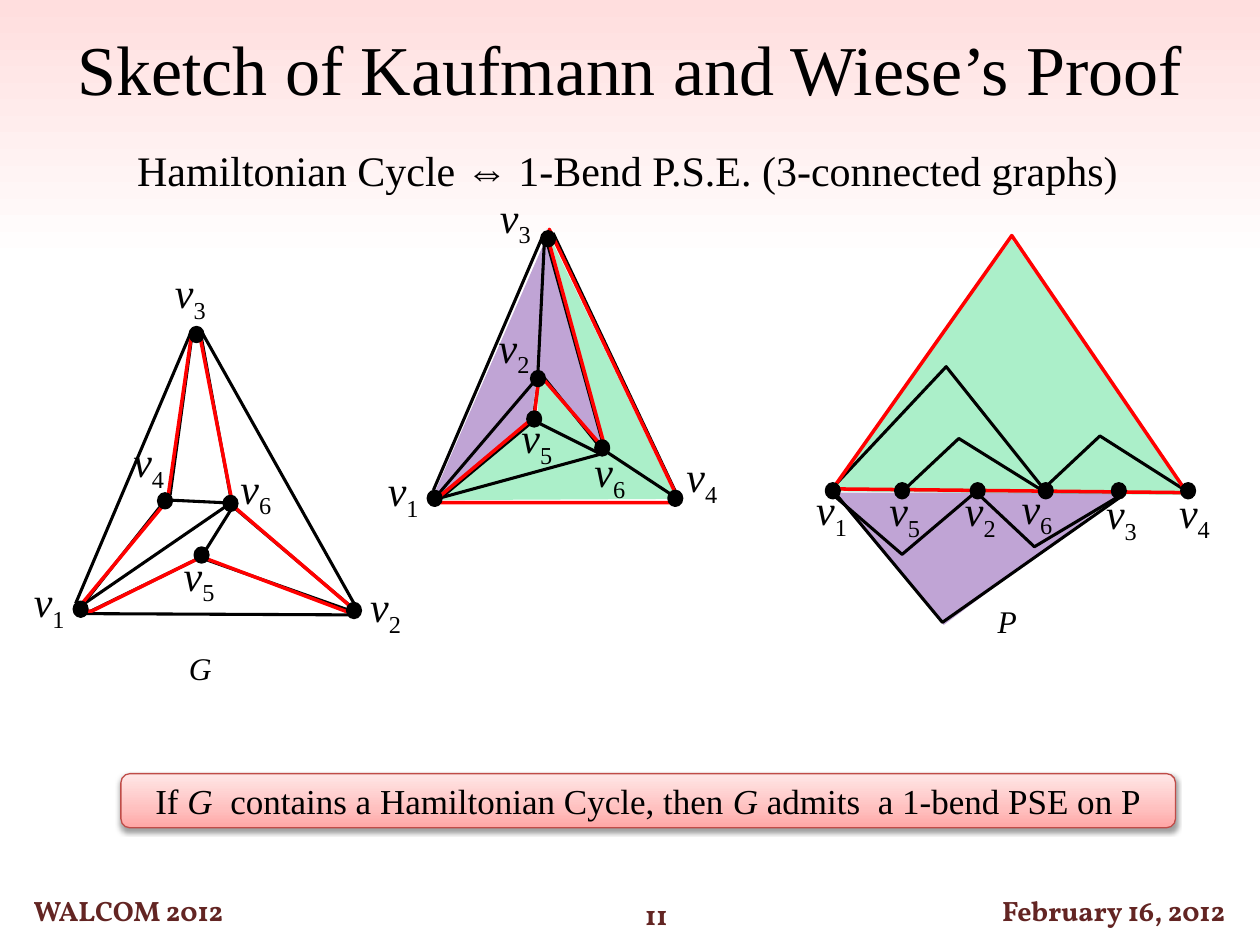
from lxml import etree
from pptx import Presentation
from pptx.dml.color import RGBColor
from pptx.enum.shapes import MSO_CONNECTOR, MSO_SHAPE
from pptx.enum.text import MSO_ANCHOR, MSO_AUTO_SIZE, PP_ALIGN
from pptx.oxml.ns import qn
from pptx.util import Inches, Pt

LINE = MSO_CONNECTOR.STRAIGHT
OVAL, RECT, ROUND = MSO_SHAPE.OVAL, MSO_SHAPE.RECTANGLE, MSO_SHAPE.ROUNDED_RECTANGLE
LEFT, MID = PP_ALIGN.LEFT, PP_ALIGN.CENTER
CENTER = MSO_ANCHOR.MIDDLE
GROW = MSO_AUTO_SIZE.SHAPE_TO_FIT_TEXT

BLACK = RGBColor(0, 0, 0)
WHITE = RGBColor(255, 255, 255)
RED = RGBColor(255, 0, 0)
PURPLE = RGBColor(0x70, 0x30, 0xA0)
GREEN = RGBColor(0x00, 0xD0, 0x5E)
BROWN = RGBColor(0x63, 0x25, 0x23)
PINK = RGBColor(0xFF, 0xDE, 0xDE)
ROSE = RGBColor(0xBF, 0x4C, 0x48)
GLOW = [(0, RGBColor(0xFF, 0xA6, 0xA5)), (35, RGBColor(0xFF, 0xC0, 0xBF)),
        (100, RGBColor(0xFF, 0xE7, 0xE7))]
FADE = [(0, WHITE), (70, WHITE), (100, PINK)]

SERIF, FOOT = "Times New Roman", "Vollkorn"

# Each graph: vertex -> (dot left, dot top, label left, label top)
GRAPH = {1: (0.59, 4.78, 0.17, 4.52), 2: (2.76, 4.79, 2.84, 4.56),
         3: (1.51, 2.6, 1.29, 2.07), 4: (1.26, 3.92, 0.96, 3.41),
         5: (1.55, 4.35, 1.36, 4.31), 6: (1.78, 3.94, 1.81, 3.62)}
GRAPH_EDGES = [
    (1.51, 2.65, 0.6, 4.79), (1.61, 2.65, 2.81, 4.79), (1.56, 4.44, 0.64, 4.89),
    (2.76, 4.84, 1.63, 4.44), (2.77, 4.8, 1.86, 4.03), (0.6, 4.87, 1.28, 4.01),
    (1.52, 2.69, 1.35, 3.93), (1.6, 2.69, 1.83, 3.94), (1.63, 4.37, 1.83, 4.05),
    (1.82, 4, 0.67, 4.79), (2.77, 4.88, 0.6, 4.87), (1.78, 3.99, 1.36, 3.97)]
GRAPH_CYCLE = [
    (1.33, 3.97), (0.61, 4.84), (0.67, 4.85), (0.73, 4.85), (1.6, 4.42),
    (2.82, 4.88), (2.82, 4.81), (2.79, 4.82), (1.82, 3.99), (1.84, 3.97),
    (1.58, 2.63), (1.52, 2.66)]

SPLIT = {1: (3.4, 3.9, 2.98, 3.64), 2: (4.22, 2.95, 3.86, 2.5),
         3: (4.3, 1.84, 3.87, 1.47), 4: (5.31, 3.9, 5.35, 3.53),
         5: (4.19, 3.27, 4.04, 3.22), 6: (4.73, 3.5, 4.62, 3.49)}
SPLIT_EDGES = [
    (4.3, 1.89, 3.44, 3.89), (4.39, 1.85, 5.36, 3.9), (3.48, 3.99, 5.34, 3.99),
    (4.32, 1.93, 4.27, 2.95), (3.48, 3.92, 4.23, 3.04), (4.24, 3.27, 4.27, 3.06),
    (4.74, 3.52, 4.32, 3), (4.21, 3.36, 3.5, 3.95), (4.78, 3.5, 4.35, 1.95),
    (4.82, 3.59, 3.5, 3.95), (4.28, 3.36, 4.78, 3.61), (5.32, 3.92, 4.82, 3.59)]
SPLIT_CYCLE = [
    (3.43, 3.99), (5.39, 3.99), (5.36, 3.91), (4.36, 1.82), (4.36, 1.93),
    (4.81, 3.58), (4.28, 2.97), (4.24, 3.31)]
SPLIT_OUT = [(3.45, 3.91), (3.51, 3.93), (4.22, 3.31), (4.27, 2.94),
             (4.81, 3.58), (4.53, 2.56), (4.34, 1.81), (4.34, 1.88)]
SPLIT_IN = [(3.42, 3.97), (4.27, 3.31), (4.27, 2.98), (4.81, 3.57),
            (4.36, 1.87), (5.37, 3.96)]

ROW = 3.84
POINTS = {1: (6.56, ROW, 6.38, 3.79), 5: (7.11, ROW, 6.96, 3.8),
          2: (7.71, ROW, 7.56, 3.8), 6: (8.25, ROW, 8.01, 3.78),
          3: (8.83, ROW, 8.68, 3.82), 4: (9.38, ROW, 9.26, 3.81)}
BENDS = [
    [(6.58, 3.9), (7.16, 4.4), (7.75, 3.9)],
    [(6.6, 3.88), (7.48, 4.94), (8.9, 3.94)],
    [(7.72, 3.88), (8.21, 4.34), (8.88, 3.94)],
    [(6.6, 3.88), (7.51, 2.91), (8.3, 3.9)],
    [(7.13, 3.93), (7.61, 3.48), (8.3, 3.91)],
    [(8.25, 3.91), (8.73, 3.46), (9.42, 3.9)]]
TOUR = [(6.57, 3.88), (9.42, 3.91), (8.03, 1.87), (6.63, 3.85)]
BELOW = [(6.61, 3.91), (7.49, 4.96), (8.9, 3.91)]
ABOVE = [(6.58, 3.9), (8.03, 1.9), (9.45, 3.93)]


def write(shape, *runs, size=24, font=SERIF, color=BLACK, bold=False, align=LEFT):
    """Fill a shape with (text, style) runs; style is "", "i" or "sub"."""
    para = shape.text_frame.paragraphs[0]
    para.alignment = align
    for text, style in runs:
        run = para.add_run()
        run.text = text
        face = run.font
        face.size, face.name, face.bold = Pt(size), font, bold
        face.italic = style == "i"
        face.color.rgb = color
        if style == "sub":
            run._r.get_or_add_rPr().set("baseline", "-25000")


def label(slide, x, y, w, h, *runs, wrap=False, **form):
    box = slide.shapes.add_textbox(Inches(x), Inches(y), Inches(w), Inches(h))
    box.text_frame.word_wrap = wrap
    box.text_frame.auto_size = GROW
    write(box, *runs, **form)


def block(slide, kind, x, y, w, h):
    """Add a bare shape without fill, line or shadow."""
    shape = slide.shapes.add_shape(kind, Inches(x), Inches(y), Inches(w), Inches(h))
    shape.shadow.inherit = False
    shape.fill.background()
    shape.line.fill.background()
    shape.text_frame.vertical_anchor = CENTER
    return shape


def shade(shape, stops):
    """Set a gradient that runs from bottom to top."""
    shape.fill.gradient()
    shape.fill.gradient_angle = 90
    steps = shape._element.spPr.find(".//" + qn("a:gsLst"))
    for old in list(steps):
        steps.remove(old)
    for pos, color in stops:
        step = etree.SubElement(steps, qn("a:gs"), pos=str(pos * 1000))
        etree.SubElement(step, qn("a:srgbClr"), val=str(color))


def drop(shape):
    """Give the shape a soft shadow below it."""
    effects = shape._element.spPr.find(qn("a:effectLst"))
    soft = etree.SubElement(effects, qn("a:outerShdw"), blurRad="39370",
                            dist="20320", dir="5400000", rotWithShape="0")
    tint = etree.SubElement(soft, qn("a:srgbClr"), val=str(BLACK))
    etree.SubElement(tint, qn("a:alpha"), val="38000")


def trace(slide, points, close=False):
    spots = [(Inches(x), Inches(y)) for x, y in points]
    pen = slide.shapes.build_freeform(*spots[0])
    pen.add_line_segments(spots[1:], close=close)
    shape = pen.convert_to_shape()
    shape.shadow.inherit = False
    shape.fill.background()
    return shape


def region(slide, points, color, alpha):
    shape = trace(slide, points, close=True)
    shape.line.fill.background()
    shape.fill.solid()
    shape.fill.fore_color.rgb = color
    tint = shape._element.spPr.find(qn("a:solidFill")).find(qn("a:srgbClr"))
    etree.SubElement(tint, qn("a:alpha"), val=str(alpha * 1000))


def stroke(shape, color, width):
    shape.line.color.rgb = color
    shape.line.width = Pt(width)


def edge(slide, *ends):
    line = slide.shapes.add_connector(LINE, *map(Inches, ends))
    stroke(line, BLACK, 1.75)
    etree.SubElement(line._element.spPr, qn("a:effectLst"))


def nodes(slide, spots):
    for num, (x, y, left, top) in spots.items():
        label(slide, left, top, 0.46, 0.5, ("v", "i"), (str(num), "sub"))
        dot = block(slide, OVAL, x, y, 0.1, 0.11)
        dot.fill.solid()
        dot.fill.fore_color.rgb = BLACK
        stroke(dot, BLACK, 2)


def graph(slide, edges, cycle, spots):
    for ends in edges:
        edge(slide, *ends)
    stroke(trace(slide, cycle, close=True), RED, 2)
    nodes(slide, spots)


def main():
    deck = Presentation()
    deck.slide_width, deck.slide_height = Inches(10), Inches(7.5)
    slide = deck.slides.add_slide(deck.slide_layouts[6])

    shade(block(slide, RECT, 0, 0, 10, 7.01), FADE)
    for x, y, w, text in [(-0.01, 7.05, 2.06, "WALCOM 2012"), (4.18, 7.08, 2.06, "11"),
                          (7.69, 7.05, 2.3, "February 16, 2012")]:
        write(block(slide, ROUND, x, y, w, 0.35), (text, ""), size=16, font=FOOT,
              color=BROWN, bold=True, align=MID)
    label(slide, 0, 0.15, 10, 0.77, ("Sketch of Kaufmann and Wiese’s Proof", ""),
          wrap=True, size=40, align=MID)
    label(slide, 0.99, 1.1, 8.41, 0.5,
          ("Hamiltonian Cycle ⇔ 1-Bend P.S.E. (3-connected graphs)", ""))

    graph(slide, GRAPH_EDGES, GRAPH_CYCLE, GRAPH)
    label(slide, 1.4, 5.1, 0.36, 0.4, ("G", "i"), size=18)

    region(slide, SPLIT_OUT, PURPLE, 44)
    region(slide, SPLIT_IN, GREEN, 33)
    graph(slide, SPLIT_EDGES, SPLIT_CYCLE, SPLIT)

    region(slide, BELOW, PURPLE, 44)
    region(slide, ABOVE, GREEN, 33)
    for bend in BENDS:
        stroke(trace(slide, bend), BLACK, 1.75)
    stroke(trace(slide, TOUR), RED, 2)
    nodes(slide, POINTS)
    label(slide, 7.82, 4.73, 0.36, 0.4, ("P", "i"), size=18)

    claim = block(slide, ROUND, 0.96, 6.14, 8.37, 0.43)
    shade(claim, GLOW)
    stroke(claim, ROSE, 0.75)
    drop(claim)
    write(claim, ("If ", ""), ("G ", "i"), (" contains a Hamiltonian Cycle, then ", ""),
          ("G", "i"), (" admits  a 1-bend PSE on P", ""), size=20, align=MID)
    deck.save("out.pptx")


if __name__ == "__main__":
    main()
